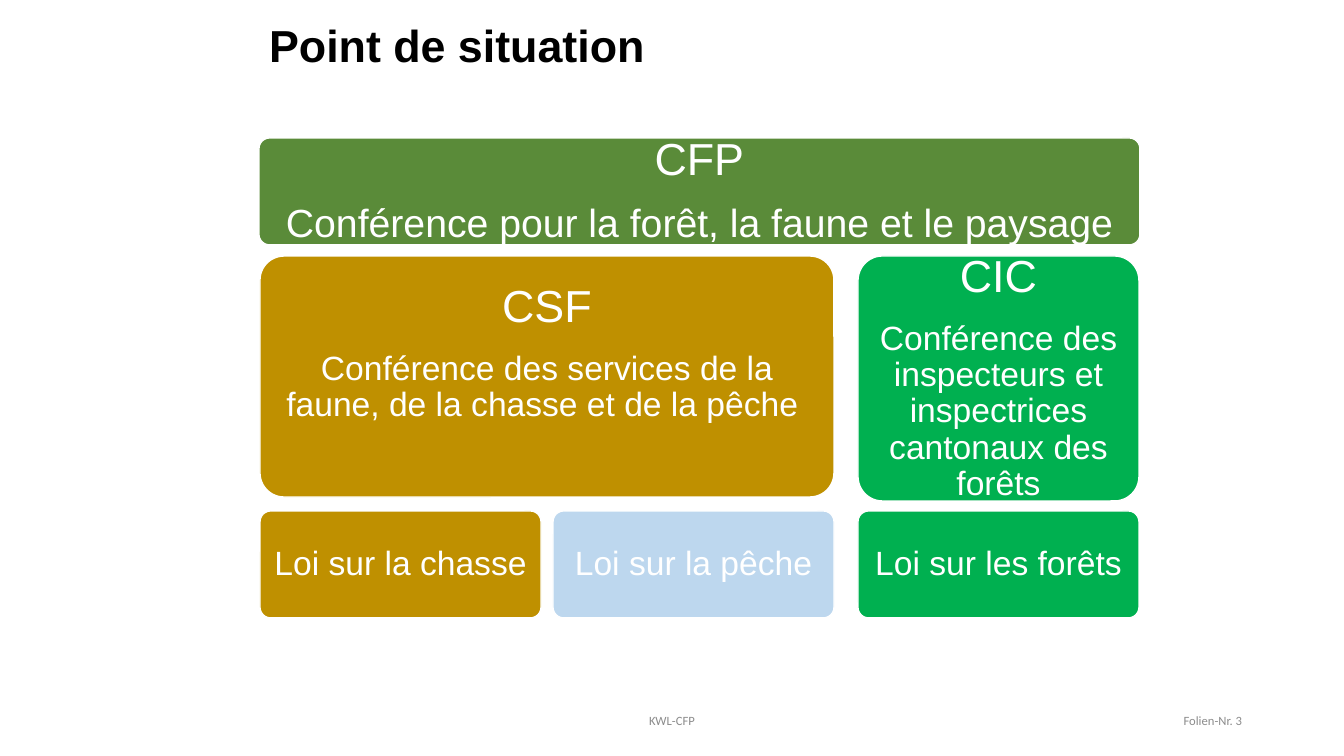
from pptx import Presentation
from pptx.dml.color import RGBColor
from pptx.enum.shapes import MSO_SHAPE
from pptx.enum.text import MSO_ANCHOR, PP_ALIGN
from pptx.util import Emu, Pt

PX = 914400 / 100.8
ROUNDED = MSO_SHAPE.ROUNDED_RECTANGLE
MIDDLE = MSO_ANCHOR.MIDDLE
LEFT, CENTER, RIGHT = PP_ALIGN.LEFT, PP_ALIGN.CENTER, PP_ALIGN.RIGHT
COLORS = {
    "black": "000000",
    "white": "FFFFFF",
    "grey": "8C8C8C",
    "landscape": "5A8B39",
    "hunting": "BF9000",
    "fishing": "BDD7EE",
    "forest": "00B050",
}


def px(*lengths):
    return [Emu(round(length * PX)) for length in lengths]


def format_paragraph(paragraph, size, color, align, font="Arial", bold=False):
    paragraph.alignment = align
    for run in paragraph.runs:
        run.font.name = font
        run.font.size = Pt(size)
        run.font.bold = bold
        run.font.color.rgb = RGBColor.from_string(COLORS[color])


prs = Presentation()
prs.slide_width, prs.slide_height = px(1344, 756)
slide = prs.slides.add_slide(prs.slide_layouts[5])

title = slide.shapes.title
title.left, title.top, title.width, title.height = px(259, 14, 848, 67)
title.text_frame.text = "Point de situation"
title.text_frame.vertical_anchor = MIDDLE
heading = title.text_frame.paragraphs[0]
heading.line_spacing = 0.9
format_paragraph(heading, 32, "black", LEFT, bold=True)

LAW_TOP, LAW_WIDTH, ROW_HEIGHT = 511, 281, 107
HUNTING_X, FISHING_X, FOREST_X = 260, 553, 858
CONFERENCE_TOP = 256

blocks = [
    ((259, 138, 881, ROW_HEIGHT), "landscape", 13, 13,
     [("CFP", 32), ("Conférence pour la forêt, la faune et le paysage", 28)]),
    ((HUNTING_X, CONFERENCE_TOP, FISHING_X + LAW_WIDTH - HUNTING_X, 241), "hunting", 13, 58,
     [("CSF", 32), ("Conférence des services de la faune, de la chasse et de la pêche ", 24)]),
    ((FOREST_X, CONFERENCE_TOP, LAW_WIDTH, 245), "forest", 13, 13,
     [("CIC", 32), ("Conférence des inspecteurs et inspectrices cantonaux des forêts", 24)]),
]
for left, color, law in [
    (HUNTING_X, "hunting", "Loi sur la chasse"),
    (FISHING_X, "fishing", "Loi sur la pêche"),
    (FOREST_X, "forest", "Loi sur les forêts"),
]:
    blocks.append(((left, LAW_TOP, LAW_WIDTH, ROW_HEIGHT), color, 10, 10, [(law, 24)]))

for place, color, inset, bottom_inset, lines in blocks:
    block = slide.shapes.add_shape(ROUNDED, *px(*place))
    block.adjustments[0] = 0.1
    block.shadow.inherit = False
    block.fill.solid()
    block.fill.fore_color.rgb = RGBColor.from_string(COLORS[color])
    block.line.color.rgb = RGBColor.from_string(COLORS["white"])
    block.line.width = Pt(1)
    frame = block.text_frame
    frame.word_wrap = True
    frame.vertical_anchor = MIDDLE
    frame.margin_left, frame.margin_top, frame.margin_right, frame.margin_bottom = px(
        inset, inset, inset, bottom_inset)
    frame.text = "\n".join(text for text, size in lines)
    for paragraph, (text, size) in zip(frame.paragraphs, lines):
        paragraph.line_spacing = 0.9
        paragraph.space_after = Pt(round(size * 0.42, 1))
        format_paragraph(paragraph, size, "white", CENTER)

for left, width, text, align in [
    (445, 454, "KWL-CFP", CENTER),
    (950, 302, "Folien-Nr. 3", RIGHT),
]:
    footer = slide.shapes.add_textbox(*px(left, 701, width, 40)).text_frame
    footer.word_wrap = True
    footer.vertical_anchor = MIDDLE
    footer.text = text
    format_paragraph(footer.paragraphs[0], 9, "grey", align, font="Calibri")

prs.save("out.pptx")
